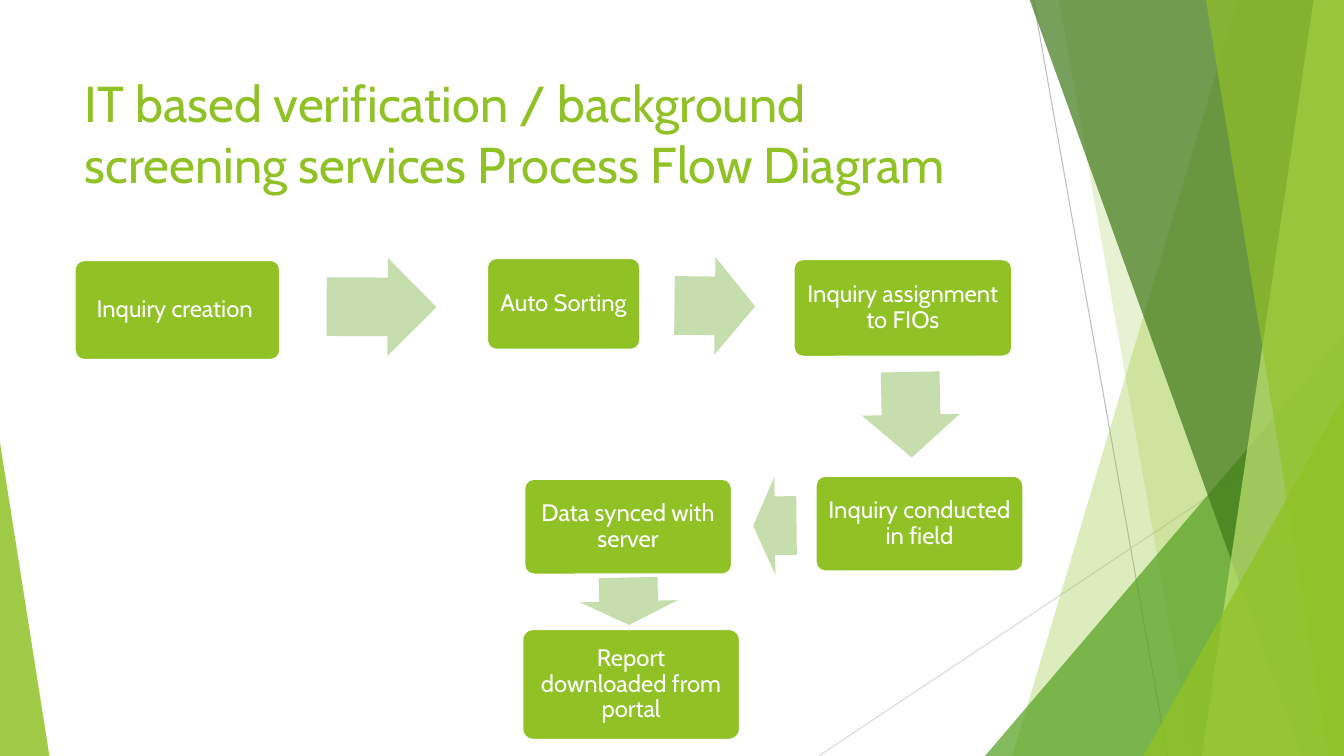
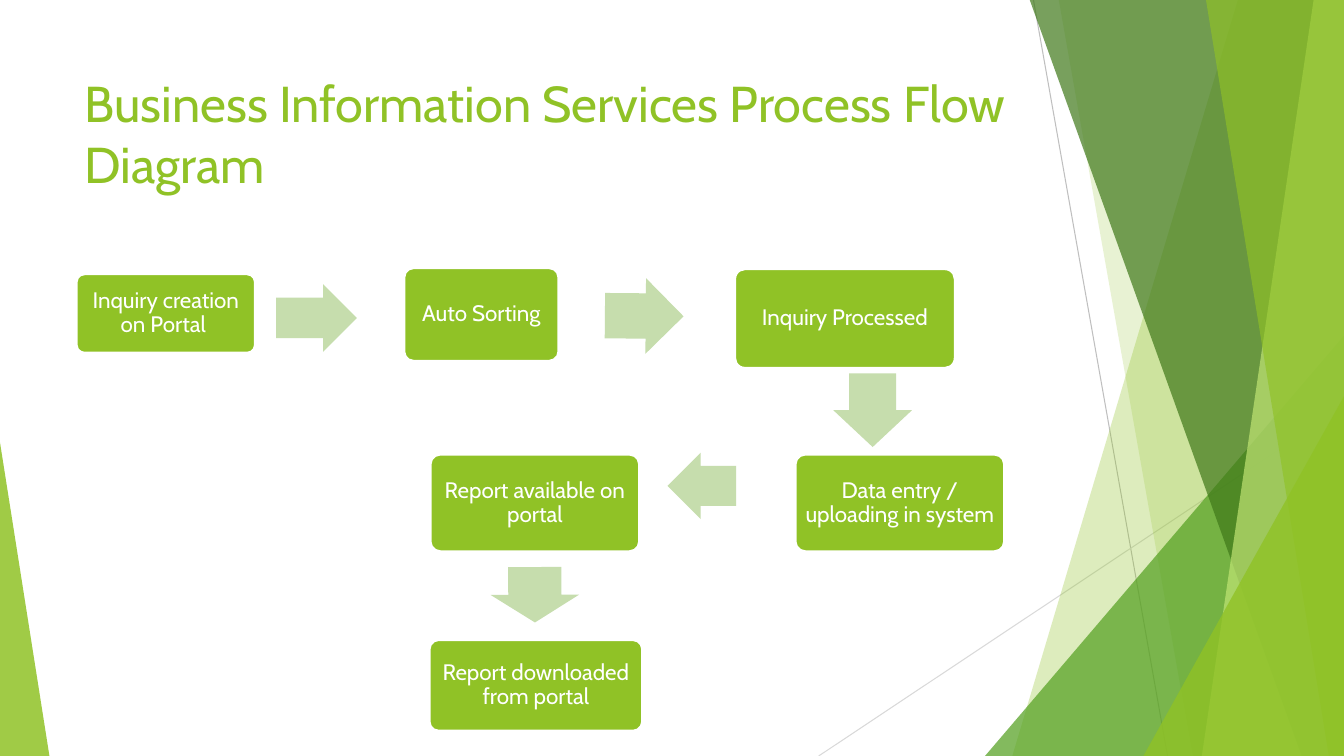
from pptx import Presentation
from pptx.dml.color import RGBColor as Rgb
from pptx.enum.shapes import MSO_CONNECTOR as Link, MSO_SHAPE as Kind
from pptx.enum.text import MSO_ANCHOR as Anchor, PP_ALIGN as Align
from pptx.oxml.ns import qn
from pptx.util import Inches, Pt
from lxml.etree import SubElement as Sub

WIDE, HIGH = 13.33, 7.5
FONT = "Cabin"
HUES = {
    "lime": "90C226", "leaf": "54A021", "moss": "3F7819", "pale": "C0E474",
    "arrow": "C6DDAD", "white": "FFFFFF", "grey": "BFBFBF", "mist": "D9D9D9",
}


def hue(name):
    return Rgb.from_string(HUES[name])


def paint(shape, name, alpha=100):
    """Fill a shape, with no line and no shadow."""
    shape.shadow.inherit = False
    shape.line.fill.background()
    shape.fill.solid()
    shape.fill.fore_color.rgb = hue(name)
    if alpha < 100:
        clr = shape.fill._xPr.find(qn("a:solidFill"))[0]
        Sub(clr, qn("a:alpha"), val=str(alpha * 1000))


def write(shape, text, size, color="white", align=Align.LEFT,
          anchor=Anchor.TOP, inset=(0.1, 0.05), space=1.0):
    frame = shape.text_frame
    frame.word_wrap = True
    frame.vertical_anchor = anchor
    frame.margin_left = frame.margin_right = Inches(inset[0])
    frame.margin_top = frame.margin_bottom = Inches(inset[1])
    par = frame.paragraphs[0]
    par.alignment = align
    par.line_spacing = space
    run = par.add_run()
    run.text = text
    run.font.size = Pt(size)
    run.font.name = FONT
    run.font.color.rgb = hue(color)


def block(slide, kind, x, y, w, h, adj=()):
    shape = slide.shapes.add_shape(kind, Inches(x), Inches(y), Inches(w), Inches(h))
    for i, part in enumerate(adj):
        shape.adjustments[i] = part
    return shape


# Backdrop: thin lines, slanted bands and corner wedges
LINES = [((10.25, 0), (11.58, 7.5), "grey"), ((13.33, 4.03), (8.12, 7.5), "mist")]
# Back to front: bands hold top and bottom x, wedges hold width and height
FACETS = [
    ("band", 12.28, 10.04, "lime", 30),
    ("band", 10.5, 11.83, "lime", 20),
    ("right", 3.56, 4.17, "leaf", 72),
    ("band", 10.21, 12.91, "moss", 70),
    ("band", 13.03, 11.92, "pale", 70),
    ("band", 11.96, 13.18, "lime", 65),
    ("right", 1.99, 3.57, "lime", 80),
    ("left", 0.49, 3.11, "lime", 85),
]


def ray(slide, start, end, color):
    line = slide.shapes.add_connector(
        Link.STRAIGHT, *(Inches(v) for v in (*start, *end)))
    line.line.color.rgb = hue(color)
    line.line.width = Pt(0.75)
    Sub(line._element.spPr, qn("a:effectLst"))


def band(slide, x, y, w, h, top, low):
    """Four-sided band from a slanted left edge to the right side of the box."""
    rim = y - 0.01
    spots = [(x + top, rim), (x + w, rim), (x + w, y + h), (x + low, y + h)]
    first, *rest = [(Inches(a), Inches(b)) for a, b in spots]
    pen = slide.shapes.build_freeform(*first)
    pen.add_line_segments(rest, close=True)
    return pen.convert_to_shape()


def backdrop(slide, x, y, w, h):
    for start, end, color in LINES:
        ray(slide, (x + start[0], y + start[1]), (x + end[0], y + end[1]), color)
    for kind, a, b, color, alpha in FACETS:
        if kind == "band":
            shape = band(slide, x, y, w, h, a, b)
        else:
            right = kind == "right"
            left = x + w - a if right else x
            shape = block(slide, Kind.ISOSCELES_TRIANGLE, left, y + h - b, a, b,
                          [1 if right else 0])
        paint(shape, color, alpha)


def title(slide, text, x, y, w, h):
    box = slide.shapes.add_textbox(Inches(x), Inches(y), Inches(w), Inches(h))
    write(box, text, 36, "lime")


def flow(slide, x, y, size, steps, arrows):
    """Steps and arrows, placed from the top left corner of the flow."""
    for text, dx, dy, w, h in steps:
        step = block(slide, Kind.ROUNDED_RECTANGLE, x + dx, y + dy, w, h, [0.1])
        paint(step, "lime")
        step.line.color.rgb = hue("white")
        step.line.width = Pt(1.5)
        write(step, text, size, align=Align.CENTER, anchor=Anchor.MIDDLE,
              inset=(0.07, 0.07), space=0.9)
    for dx, dy, w, h, turn in arrows:
        arrow = block(slide, Kind.RIGHT_ARROW, x + dx, y + dy, w, h, [0.6, 0.5])
        arrow.rotation = turn
        paint(arrow, "arrow")


# Steps: text, x, y, width, height; arrows: x, y, width, height, turn
PAGES = [
    {
        "title": "IT based verification / background screening services "
                 "Process Flow Diagram",
        "at": (0.74, 2.55), "size": 17,
        "steps": [
            ("Inquiry creation ", 0, 0.03, 2.04, 0.99),
            ("Auto Sorting", 4.09, 0.01, 1.52, 0.91),
            ("Inquiry assignment to FIOs", 7.13, 0.02, 2.17, 0.97),
            ("Inquiry conducted in field", 7.35, 2.17, 2.06, 0.95),
            ("Data synced with server", 4.46, 2.2, 2.06, 0.95),
            ("Report downloaded from portal", 4.44, 3.69, 2.16, 1.1),
        ],
        "arrows": [
            (2.5, 0.01, 1.09, 0.97, 0.3),
            (5.95, 0, 0.8, 0.97, 0.7),
            (7.87, 1.08, 0.85, 0.97, 88.9),
            (6.73, 2.18, 0.43, 0.97, 179.4),
            (5.26, 2.93, 0.47, 0.97, 88.7),
        ],
    },
    {
        "title": "Business Information Services Process Flow Diagram",
        "at": (0.76, 2.66), "size": 16,
        "steps": [
            ("Inquiry creation on Portal ", 0, 0.06, 1.77, 0.78),
            ("Auto Sorting", 3.25, 0, 1.53, 0.92),
            ("Inquiry Processed", 6.53, 0.01, 2.18, 0.98),
            ("Data entry / uploading in system", 7.13, 1.85, 2.07, 0.96),
            ("Report available on portal", 3.51, 1.85, 2.07, 0.96),
            ("Report downloaded from portal", 3.5, 3.69, 2.11, 0.9),
        ],
        "arrows": [
            (1.98, 0.16, 0.8, 0.67, 0),
            (5.24, 0.1, 0.78, 0.75, 0.5),
            (7.53, 1.02, 0.73, 0.78, 90),
            (5.86, 1.83, 0.68, 0.66, 180),
            (4.27, 2.8, 0.55, 0.88, 89.8),
        ],
    },
]


def main():
    deck = Presentation()
    deck.slide_width, deck.slide_height = Inches(WIDE), Inches(HIGH)
    for page in PAGES:
        slide = deck.slides.add_slide(deck.slide_layouts[6])
        backdrop(slide, 0, 0, WIDE, HIGH)
        title(slide, page["title"], 0.74, 0.67, 9.4, 1.44)
        flow(slide, *page["at"], page["size"], page["steps"], page["arrows"])
    deck.save("out.pptx")


if __name__ == "__main__":
    main()
